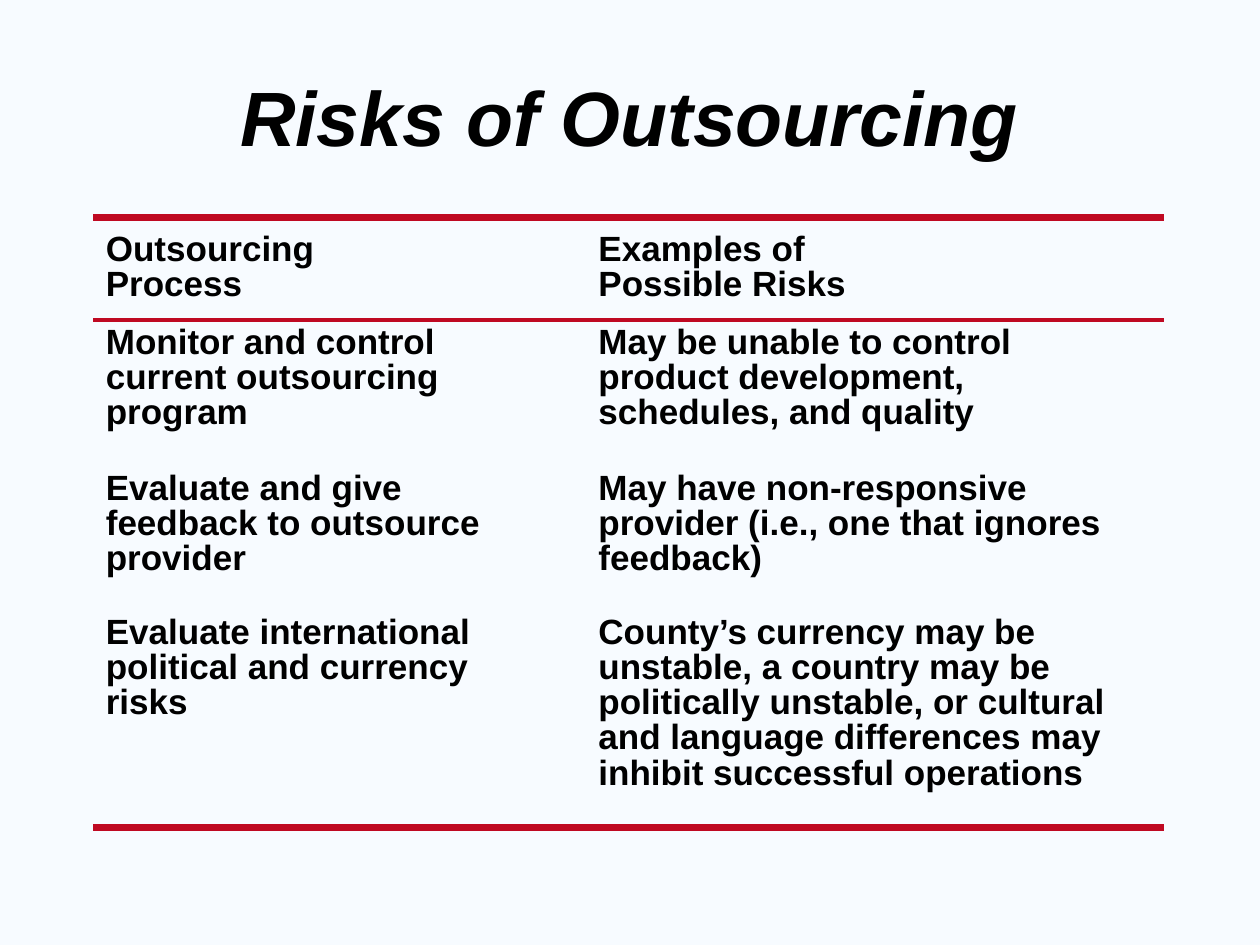
from lxml.etree import SubElement
from pptx import Presentation
from pptx.dml.color import RGBColor
from pptx.enum.text import MSO_ANCHOR as Anchor, MSO_AUTO_SIZE as AutoSize, PP_ALIGN as Align
from pptx.oxml.ns import qn
from pptx.util import Cm, Pt

BACKGROUND, INK, RED = "F7FBFF", "000000", "BF0922"
THICK, THIN = 4.5, 2.25

TITLE_FORMAT = {"name": "Arial", "size": Pt(44), "bold": True, "italic": True}
CELL_FORMAT = {"name": "Arial", "size": Pt(20), "bold": True, "italic": False}

COLUMN_WIDTHS = [8.76, 1.17, 11.66]
ROW_HEIGHTS = [2.06, 2.95, 2.9, 4.39]
RISKS = [
    ("Outsourcing\nProcess", "Examples of\nPossible Risks"),
    ("Monitor and control current outsourcing program",
     "May be unable to control product development, schedules, and quality"),
    ("Evaluate and give feedback to outsource provider",
     "May have non-responsive provider (i.e., one that ignores feedback)"),
    ("Evaluate international political and currency risks",
     "County’s currency may be unstable, a country may be politically unstable, "
     "or cultural and language differences may inhibit successful operations"),
]
# Horizontal rules, numbered from the top edge of the table down
RULES = {0: THICK, 1: THIN, len(RISKS): THICK}


def color(hex_value):
    return RGBColor.from_string(hex_value)


def write(frame, text, font_format, line_spacing, align):
    para = frame.paragraphs[0]
    para.text = text
    para.line_spacing = line_spacing
    para.alignment = align
    for span in para.runs:
        for name, value in font_format.items():
            setattr(span.font, name, value)
        span.font.color.rgb = color(INK)


def set_border(cell, side, width=None):
    properties = cell._tc.get_or_add_tcPr()
    line = SubElement(properties, qn(f"a:ln{side}"))
    if width is None:
        SubElement(line, qn("a:noFill"))
        return
    line.set("w", str(Pt(width)))
    fill = SubElement(line, qn("a:solidFill"))
    SubElement(fill, qn("a:srgbClr")).set("val", RED)


def add_title(page, text):
    title = page.shapes.title
    title.left, title.top, title.width, title.height = Cm(1.9), Cm(1.22), Cm(21.59), Cm(2.51)
    frame = title.text_frame
    frame.auto_size = AutoSize.NONE
    frame.vertical_anchor = Anchor.MIDDLE
    write(frame, text, TITLE_FORMAT, 0.85, Align.CENTER)


def add_risk_table(page):
    table = page.shapes.add_table(
        len(ROW_HEIGHTS), len(COLUMN_WIDTHS), Cm(1.88), Cm(4.39),
        Cm(sum(COLUMN_WIDTHS)), Cm(sum(ROW_HEIGHTS))).table
    table.horz_banding = False
    for column, width in zip(table.columns, COLUMN_WIDTHS):
        column.width = Cm(width)

    for index, (row, height) in enumerate(zip(table.rows, ROW_HEIGHTS)):
        row.height = Cm(height)
        for cell in row.cells:
            for side in "LR":
                set_border(cell, side)
            set_border(cell, "T", RULES.get(index))
            set_border(cell, "B", RULES.get(index + 1))
            cell.fill.background()
            cell.vertical_anchor = Anchor.MIDDLE if index == 0 else Anchor.TOP
        # The narrow middle column stays empty as a gutter
        for column_index, text in zip((0, 2), RISKS[index]):
            write(row.cells[column_index].text_frame, text, CELL_FORMAT, 0.9, Align.LEFT)


def main():
    deck = Presentation()
    deck.slide_width, deck.slide_height = Cm(25.4), Cm(19.05)
    page = deck.slides.add_slide(deck.slide_layouts[5])
    page.background.fill.solid()
    page.background.fill.fore_color.rgb = color(BACKGROUND)
    add_title(page, "Risks of Outsourcing")
    add_risk_table(page)
    deck.save("out.pptx")


if __name__ == "__main__":
    main()
